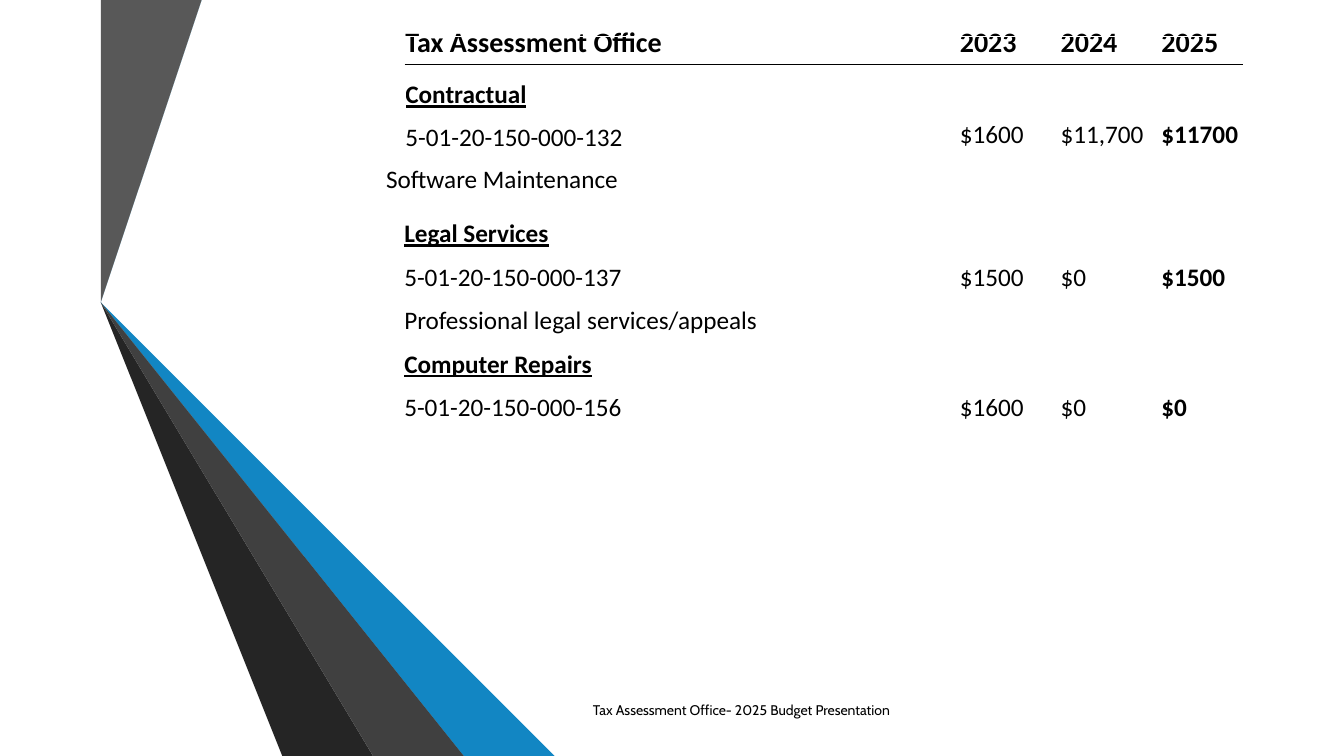
from lxml.etree import SubElement
from pptx import Presentation
from pptx.dml.color import RGBColor
from pptx.oxml.ns import qn
from pptx.util import Emu, Inches, Pt

BLACK = RGBColor(0x00, 0x00, 0x00)
SKY = RGBColor(0x2F, 0xAC, 0xEB)
BLUE = RGBColor(0x12, 0x86, 0xC3)
DEEP_BLUE = RGBColor(0x0B, 0x5A, 0x82)
GREY = RGBColor(0x58, 0x58, 0x58)
CHARCOAL = RGBColor(0x40, 0x40, 0x40)
NEAR_BLACK = RGBColor(0x25, 0x25, 0x25)

deck = Presentation()
deck.slide_width, deck.slide_height = Inches(13.33), Inches(7.5)
slide = deck.slides.add_slide(deck.slide_layouts[6])
BOTTOM = 7.5


def style(paragraph, size, bold=False, underline=False, name="Calibri"):
    font = paragraph.font
    font.name, font.size = name, Pt(size)
    font.bold, font.underline = bold, underline
    font.color.rgb = BLACK


def add_frame(left, top, width, height, inset_top):
    frame = slide.shapes.add_textbox(
        Inches(left), Inches(top), Inches(width), Inches(height)).text_frame
    frame.word_wrap = True
    frame.margin_left = frame.margin_right = frame.margin_bottom = 0
    frame.margin_top = Inches(inset_top)
    return frame


# Folded ribbons on the left
ribbons = [
    (SKY, [(2.24, 0), (1.82, 0), (1.08, 2.94), (1.47, 3.04)]),
    (GREY, [(1.73, 0), (1.31, 0), (0.6, 2.82), (0.99, 2.92)]),
    (NEAR_BLACK, [(0.6, 2.82), (3.41, BOTTOM), (3.54, BOTTOM)]),
    (DEEP_BLUE, [(1.08, 2.94), (4.59, BOTTOM), (4.73, BOTTOM)]),
    (BLUE, [(1.08, 2.94), (4.73, BOTTOM), (6.08, BOTTOM), (1.47, 3.04)]),
    (CHARCOAL, [(0.6, 2.82), (3.54, BOTTOM), (4.52, BOTTOM), (1.05, 3.01),
                (0.99, 2.92)]),
]
for color, corners in ribbons:
    outline = slide.shapes.build_freeform(*corners[0], scale=Inches(1))
    outline.add_line_segments(corners[1:], close=True)
    ribbon = outline.convert_to_shape(Emu(0), Emu(0))
    ribbon.shadow.inherit = False
    ribbon.fill.solid()
    ribbon.fill.fore_color.rgb = color
    ribbon.line.fill.background()

# Budget table: heading row and the contractual line
budget = slide.shapes.add_table(
    2, 4, Inches(4.02), Inches(0.36), Inches(8.3), Inches(1.14)).table
budget.first_row = budget.horz_banding = False
for row, height in zip(budget.rows, (0.28, 0.86)):
    row.height = Inches(height)
columns = [
    (3.83, 0, "Tax Assessment Office", "Contractual"),
    (2.55, 1.67, "2023", "$1600"),
    (1, 0.12, "2024", "$11,700"),
    (0.92, 0.12, "2025", "$11700"),
]
for index, (width, indent, heading, entry) in enumerate(columns):
    budget.columns[index].width = Inches(width)
    for row_index, text in enumerate((heading, entry)):
        cell = budget.cell(row_index, index)
        cell.margin_left = Inches(indent)
        cell.margin_top = cell.margin_right = cell.margin_bottom = 0
        cell.text = text
        # Rule between the heading and the entries
        edge = SubElement(cell._tc.get_or_add_tcPr(),
                          qn("a:lnT" if row_index else "a:lnB"), w=str(Pt(1.5)))
        edge_fill = SubElement(edge, qn("a:solidFill"))
        SubElement(edge_fill, qn("a:srgbClr"), val=str(BLACK))
        cell.fill.background()
        line = cell.text_frame.paragraphs[0]
        if row_index == 0:
            line.line_spacing = Pt(16.9)
            style(line, 20, bold=True)
        elif index == 0:
            cell.margin_top = Inches(0.15)
            style(line, 18, bold=True, underline=True)
            account = cell.text_frame.add_paragraph()
            account.text = "5-01-20-150-000-132"
            account.space_before, account.line_spacing = Pt(9.4), Pt(21.5)
            style(account, 18)
        else:
            cell.margin_top = Inches(0.55)
            line.line_spacing = Pt(21.5)
            style(line, 18, bold=heading == "2025")

# Footer
footer = add_frame(5.69, 6.87, 3.14, 0.26, 0.11).paragraphs[0]
footer.text = "Tax Assessment Office- 2025 Budget Presentation"
footer.line_spacing = Pt(10.4)
footer._p.get_or_add_pPr().set("marL", str(Inches(0.19)))
style(footer, 10, name="Cabin")

# Description of the contractual line
maintenance = add_frame(3.83, 1.59, 8.44, 0.32, 0.01).paragraphs[0]
maintenance.text = "Software Maintenance"
maintenance.line_spacing = 1.07
style(maintenance, 18)

# Remaining budget lines: space before, text, 2025 amount, is a heading
entries = [
    (0, "Legal Services", "", True),
    (9.6, "5-01-20-150-000-137\t$1500\t$0\t", "$1500", False),
    (7.9, "Professional legal services/appeals", "", False),
    (9.5, "Computer Repairs", "", True),
    (9.4, "5-01-20-150-000-156\t$1600\t$0\t", "$0", False),
]
services = add_frame(4.01, 2.01, 8.44, 2.2, 0.15)
for index, (gap, text, amount, is_heading) in enumerate(entries):
    line = services.add_paragraph() if index else services.paragraphs[0]
    line.add_run().text = text
    if gap:
        line.space_before = Pt(gap)
    if amount:
        stops = SubElement(line._p.get_or_add_pPr(), qn("a:tabLst"))
        for year in range(3):
            SubElement(stops, qn("a:tab"), pos=str(Inches(5.51 + year)), algn="l")
        total = line.add_run()
        total.text = amount
        total.font.bold = True
    else:
        line.line_spacing = 1.0 if is_heading else 1.07
    style(line, 18, bold=is_heading, underline=is_heading)

deck.save("out.pptx")
